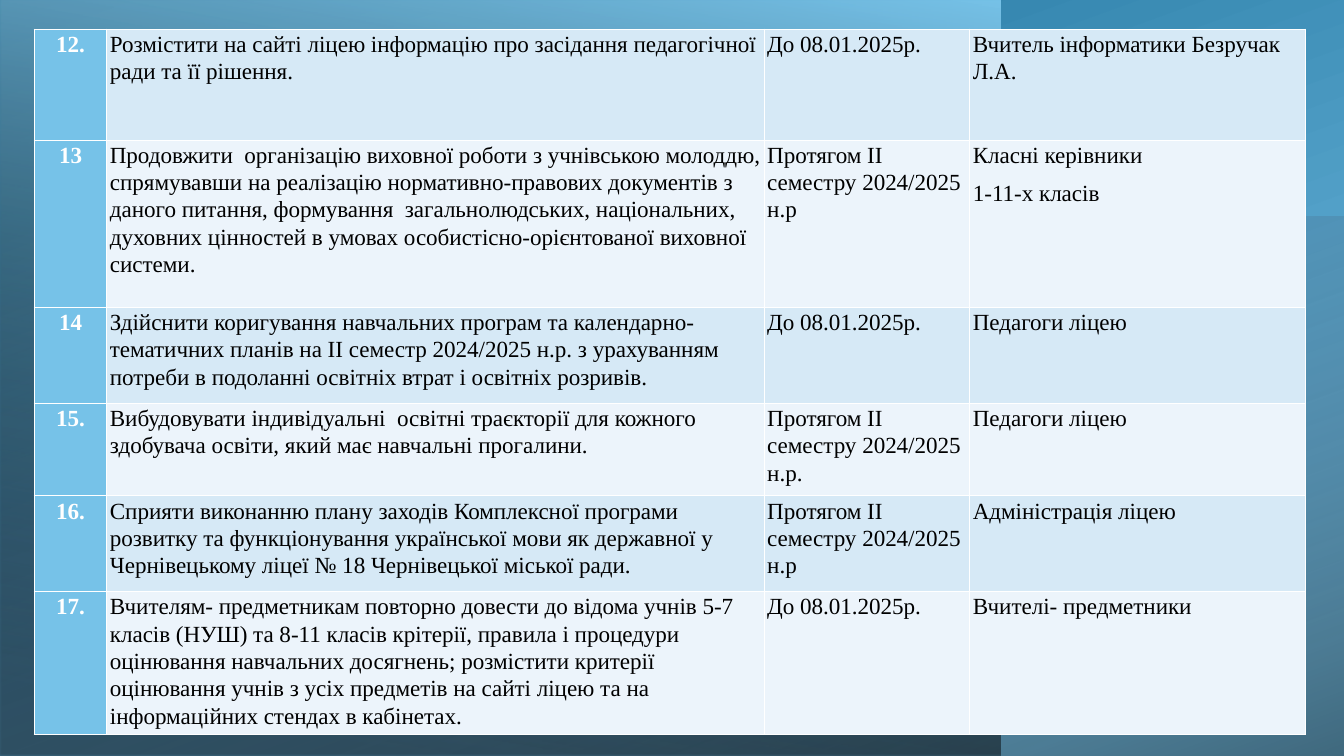
from dataclasses import dataclass

from lxml.etree import SubElement
from pptx import Presentation
from pptx.dml.color import RGBColor
from pptx.enum.shapes import MSO_SHAPE as Preset
from pptx.enum.text import PP_ALIGN as Align
from pptx.oxml import parse_xml
from pptx.oxml.ns import nsdecls, qn
from pptx.util import Inches, Pt


@dataclass(frozen=True)
class Theme:
    font: str = "Times New Roman"
    size: float = 16.5
    sky: str = "76C2E8"
    deep: str = "196C96"
    haze: str = "8EB9E7"
    dark: str = "000000"
    white: str = "FFFFFF"
    bands: tuple = ("D6E9F6", "ECF4FB")


THEME = Theme()
SLIDE_W, SLIDE_H = 13.33, 7.5
COLUMN_WIDTHS = (0.72, 6.52, 2.04, 3.33)
ROW_HEIGHTS = (1.1, 1.66, 0.95, 0.92, 0.95, 1.42)

DECISIONS = (
    ("12.",
     "Розмістити на сайті ліцею інформацію про засідання педагогічної ради та її рішення.",
     "До 08.01.2025р.",
     "Вчитель інформатики Безручак Л.А."),
    ("13",
     "Продовжити  організацію виховної роботи з учнівською молоддю, спрямувавши на "
     "реалізацію нормативно-правових документів з даного питання, формування  "
     "загальнолюдських, національних, духовних цінностей в умовах "
     "особистісно-орієнтованої виховної системи.",
     "Протягом II семестру 2024/2025 н.р",
     "Класні керівники\n1-11-х класів"),
    ("14",
     "Здійснити коригування навчальних програм та календарно- тематичних планів на "
     "ІІ семестр 2024/2025 н.р. з урахуванням потреби в подоланні освітніх втрат і "
     "освітніх розривів.",
     "До 08.01.2025р.",
     "Педагоги ліцею"),
    ("15.",
     "Вибудовувати індивідуальні  освітні траєкторії для кожного здобувача освіти, "
     "який має навчальні прогалини.",
     "Протягом ІІ семестру 2024/2025 н.р.",
     "Педагоги ліцею"),
    ("16.",
     "Сприяти виконанню плану заходів Комплексної програми розвитку та функціонування "
     "української мови як державної у Чернівецькому ліцеї № 18 Чернівецької міської ради.",
     "Протягом II семестру 2024/2025 н.р",
     "Адміністрація ліцею"),
    ("17.",
     "Вчителям- предметникам повторно довести до відома учнів 5-7 класів (НУШ) та 8-11 "
     "класів крітерії, правила і процедури оцінювання навчальних досягнень; розмістити "
     "критерії оцінювання учнів з усіх предметів на сайті ліцею та на інформаційних "
     "стендах в кабінетах.",
     "До 08.01.2025р.",
     "Вчителі- предметники"),
)


def add_gradient_panel(slide, box, rotation, angle, stops):
    """Fill the visible box with a mirrored, rotated gradient; stops are (position, colour, opacity)."""
    left, top, width, height = box
    center_x, center_y = left + width / 2, top + height / 2
    if rotation % 180:
        width, height = height, width
    panel = slide.shapes.add_shape(
        Preset.RECTANGLE, Inches(center_x - width / 2), Inches(center_y - height / 2),
        Inches(width), Inches(height))
    panel.rotation = rotation
    panel.shadow.inherit = False
    panel.line.fill.background()
    properties = panel.element.spPr
    properties.find(qn("a:xfrm")).set("flipH", "1")
    stop_xml = "".join(
        f'<a:gs pos="{position * 1000}"><a:srgbClr val="{color}">'
        f'<a:alpha val="{opacity * 1000}"/></a:srgbClr></a:gs>'
        for position, color, opacity in stops)
    gradient = parse_xml(
        f'<a:gradFill {nsdecls("a")} rotWithShape="1"><a:gsLst>{stop_xml}</a:gsLst>'
        f'<a:lin ang="{angle * 60000}" scaled="0"/></a:gradFill>')
    properties.find(qn("a:prstGeom")).addnext(gradient)


def add_backdrop(slide, box):
    left, top, width, height = box
    add_gradient_panel(slide, box, 270, 200,
                       ((8, THEME.sky, 100), (100, THEME.deep, 100)))
    add_gradient_panel(slide, (left, top, 9.92, height), 180, 80,
                       ((8, THEME.dark, 52), (100, THEME.sky, 100)))
    add_gradient_panel(slide, (left, top + 2.15, width, height - 2.15), 270, 20,
                       ((0, THEME.haze, 0), (100, THEME.dark, 46)))


def add_borders(cell):
    properties = cell._tc.get_or_add_tcPr()
    for side in ("lnL", "lnR", "lnT", "lnB"):
        border = SubElement(properties, qn(f"a:{side}"), w=str(Pt(1)))
        fill = SubElement(border, qn("a:solidFill"))
        SubElement(fill, qn("a:srgbClr"), val=THEME.white)


def format_cell(cell, text, fill, is_number):
    add_borders(cell)
    cell.fill.solid()
    cell.fill.fore_color.rgb = RGBColor.from_string(fill)
    cell.margin_left = cell.margin_right = Inches(0.03)
    cell.margin_top, cell.margin_bottom = Inches(0.01), 0
    cell.text_frame.text = text
    for paragraph in cell.text_frame.paragraphs:
        paragraph.alignment = Align.CENTER if is_number else Align.LEFT
        paragraph.line_spacing = 1.07
        paragraph.space_after = Pt(8)
        for run in paragraph.runs:
            run.font.name = THEME.font
            run.font.size = Pt(THEME.size)
            run.font.bold = is_number
            run.font.color.rgb = RGBColor.from_string(
                THEME.white if is_number else THEME.dark)


def add_decisions(slide, box):
    plan = slide.shapes.add_table(
        len(DECISIONS), len(COLUMN_WIDTHS), *map(Inches, box)).table
    plan.first_row = plan.horz_banding = False
    for column, width in zip(plan.columns, COLUMN_WIDTHS):
        column.width = Inches(width)
    for row, height in zip(plan.rows, ROW_HEIGHTS):
        row.height = Inches(height)
    for row_index, decision in enumerate(DECISIONS):
        for column_index, text in enumerate(decision):
            is_number = column_index == 0
            fill = THEME.sky if is_number else THEME.bands[row_index % 2]
            format_cell(plan.cell(row_index, column_index), text, fill, is_number)


def main():
    deck = Presentation()
    deck.slide_width, deck.slide_height = Inches(SLIDE_W), Inches(SLIDE_H)
    slide = deck.slides.add_slide(deck.slide_layouts[6])
    add_backdrop(slide, (0, 0, SLIDE_W, SLIDE_H))
    add_decisions(slide, (0.34, 0.29, sum(COLUMN_WIDTHS), sum(ROW_HEIGHTS)))
    deck.save("out.pptx")


if __name__ == "__main__":
    main()
